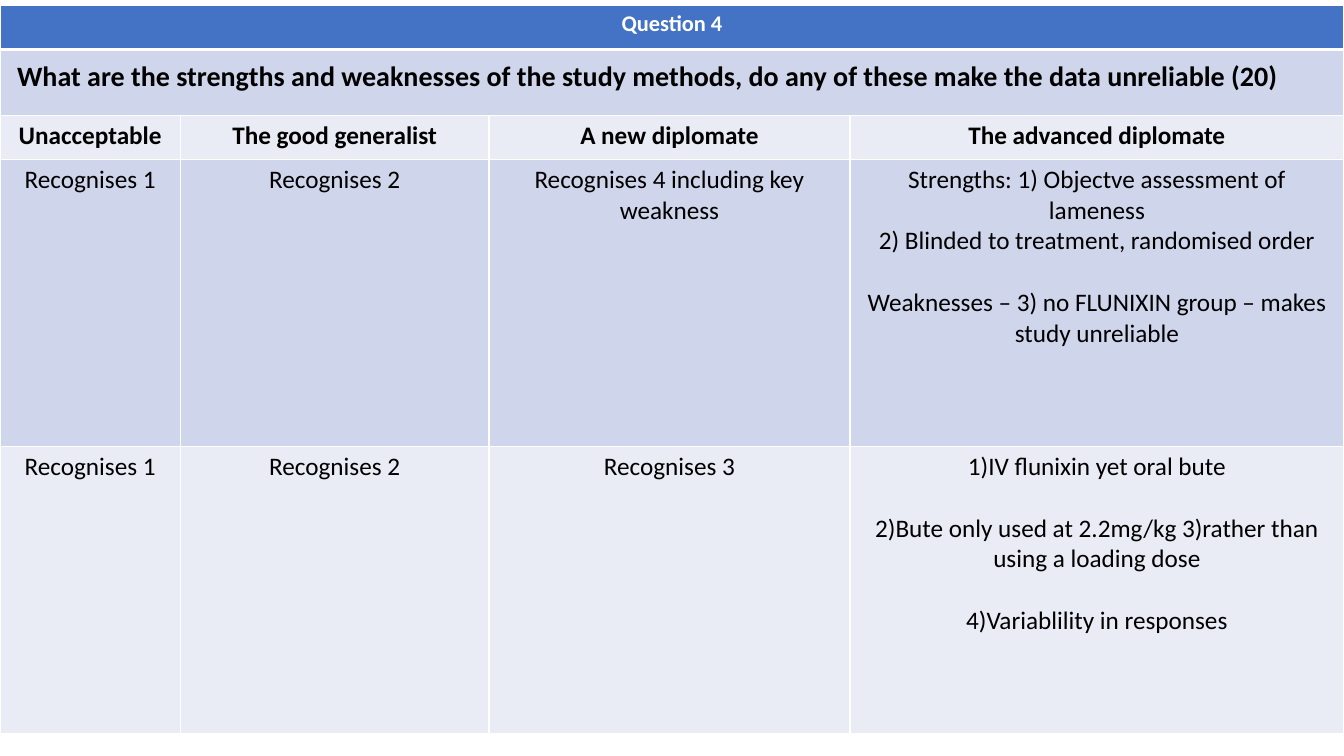
"""Build a one-slide marking rubric table for Question 4."""
from lxml import etree
from pptx import Presentation
from pptx.dml.color import RGBColor
from pptx.enum.text import PP_ALIGN
from pptx.oxml.ns import qn
from pptx.util import Inches, Pt

CENTER, LEFT = PP_ALIGN.CENTER, PP_ALIGN.LEFT
FONT = "Calibri"
COLORS = {"header": "4472C4", "dark": "CFD5EA", "light": "E9EBF5",
          "white": "FFFFFF", "black": "000000"}
COLUMNS = [1.79, 3.06, 3.58, 4.9]
ROWS = [0.44, 0.66, 0.43, 2.85, 2.85]
TABLE_TOP = 0.05
BLANK_LINE = 22

TITLE = "Question 4"
QUESTION = ("What are the strengths and weaknesses of the study methods, "
            "do any of these make the data unreliable (20)")
LEVELS = ["Unacceptable", "The good generalist", "A new diplomate",
          "The advanced diplomate"]
METHODS = ["Recognises 1", "Recognises 2", "Recognises 4 including key weakness",
           "Strengths: 1) Objectve assessment of lameness\n"
           "2) Blinded to treatment, randomised order\n\n"
           "Weaknesses – 3) no FLUNIXIN group – makes study unreliable"]
DOSING = ["Recognises 1", "Recognises 2", "Recognises 3",
          "1)IV flunixin yet oral bute\n\n"
          "2)Bute only used at 2.2mg/kg 3)rather than using a loading dose\n\n"
          "4)Variablility in responses"]


def set_borders(cell, bottom):
    """Give a cell white borders, with the bottom width in points."""
    tc_pr = cell._tc.get_or_add_tcPr()
    for side, width in (("L", 1), ("R", 1), ("T", 1), ("B", bottom)):
        ln = etree.SubElement(tc_pr, qn(f"a:ln{side}"), w=str(Pt(width)))
        fill = etree.SubElement(ln, qn("a:solidFill"))
        etree.SubElement(fill, qn("a:srgbClr"), val=COLORS["white"])


def style_cell(cell, fill, bottom=1):
    """Apply borders and a solid fill to a cell."""
    set_borders(cell, bottom)
    cell.fill.solid()
    cell.fill.fore_color.rgb = RGBColor.from_string(COLORS[fill])


def write_cell(cell, text, size=18, bold=False, color="black", align=CENTER):
    """Write text in a cell, with a line of space between its groups."""
    tf = cell.text_frame
    groups = [group.split("\n") for group in text.split("\n\n")]
    tf.text = "\n".join(line for group in groups for line in group)
    spaces = [BLANK_LINE if g and not i else 0
              for g, group in enumerate(groups) for i in range(len(group))]
    for p, space in zip(tf.paragraphs, spaces):
        p.alignment = align
        p.space_before = Pt(space)
        for r in p.runs:
            r.font.name = FONT
            r.font.size = Pt(size)
            r.font.bold = bold
            r.font.color.rgb = RGBColor.from_string(COLORS[color])


def add_banner(table, row, text, fill, bottom=1, **style):
    """Merge a whole row and write one bold text in it."""
    for cell in table.rows[row].cells:
        style_cell(cell, fill, bottom)
    first = table.cell(row, 0)
    first.merge(table.cell(row, len(COLUMNS) - 1))
    write_cell(first, text, bold=True, **style)
    return first


def add_row(table, row, texts, fill, bold=False):
    """Fill one row of separate cells."""
    for cell, text in zip(table.rows[row].cells, texts):
        style_cell(cell, fill)
        write_cell(cell, text, bold=bold)


def add_grid(s):
    """Add the empty table with its columns and rows sized."""
    table = s.shapes.add_table(len(ROWS), len(COLUMNS), 0, Inches(TABLE_TOP),
                               Inches(sum(COLUMNS)), Inches(sum(ROWS))).table
    table.first_row = table.horz_banding = False
    for column, width in zip(table.columns, COLUMNS):
        column.width = Inches(width)
    for row, height in zip(table.rows, ROWS):
        row.height = Inches(height)
    return table


def main():
    """Build and save the slide."""
    prs = Presentation()
    prs.slide_width, prs.slide_height = Inches(13.33), Inches(7.5)
    s = prs.slides.add_slide(prs.slide_layouts[6])
    table = add_grid(s)
    add_banner(table, 0, TITLE, "header", bottom=3, size=16, color="white")
    question = add_banner(table, 1, QUESTION, "dark", size=20, align=LEFT)
    question.margin_left, question.margin_top = Inches(0.17), Inches(0.1)
    add_row(table, 2, LEVELS, "light", bold=True)
    add_row(table, 3, METHODS, "dark")
    add_row(table, 4, DOSING, "light")
    prs.save("out.pptx")


if __name__ == "__main__":
    main()
